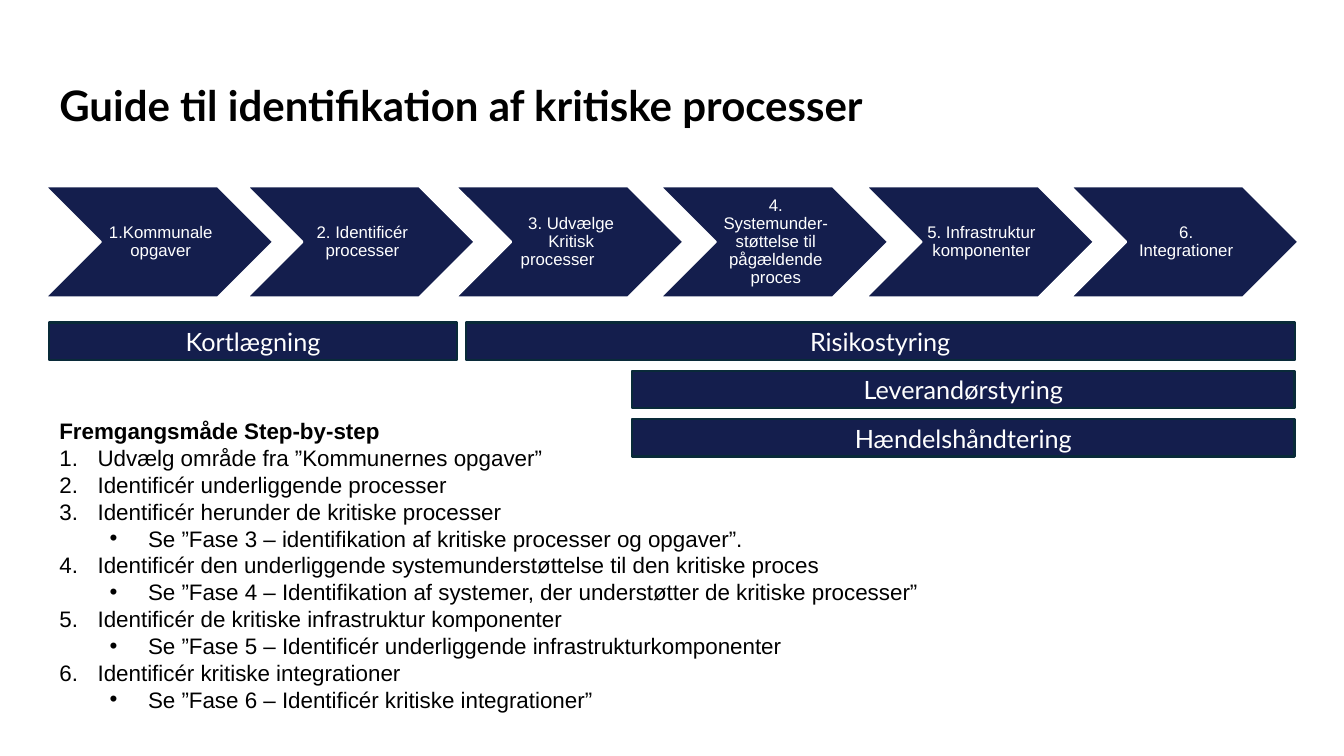
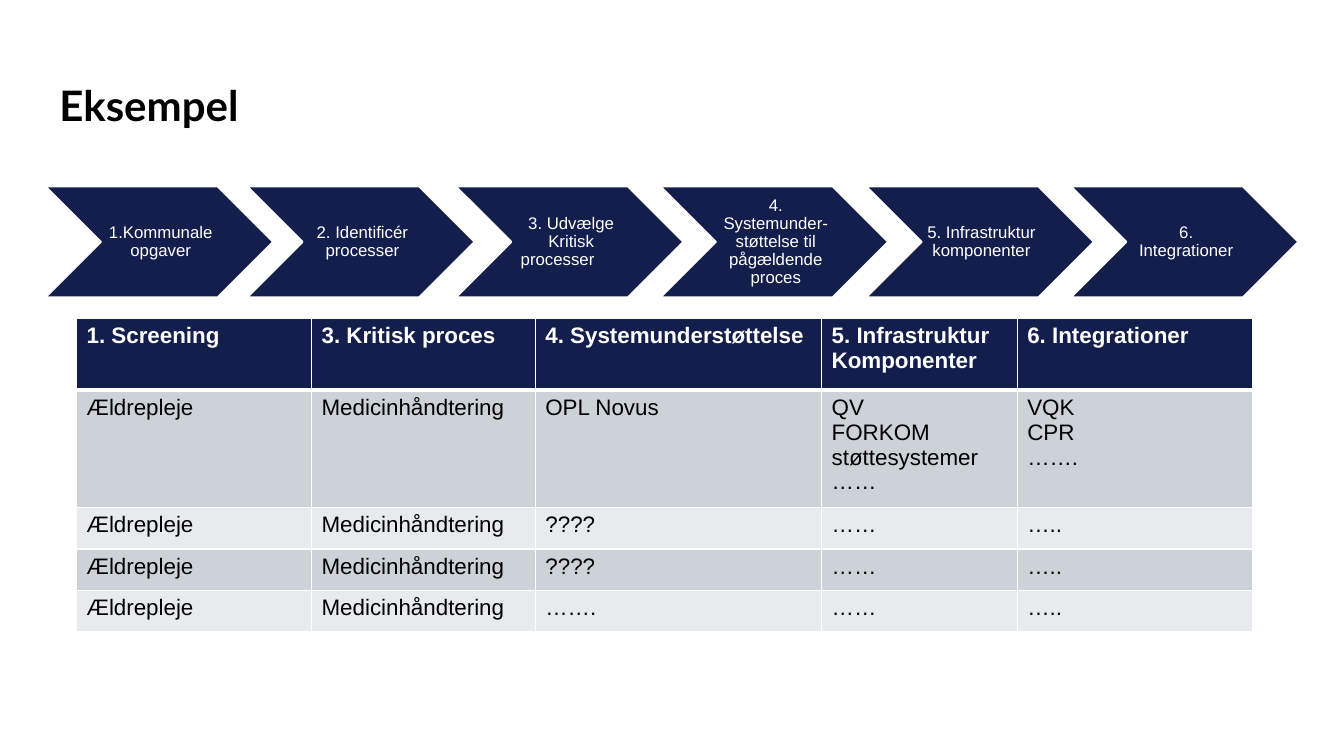
from dataclasses import dataclass

from lxml.etree import SubElement
from pptx import Presentation
from pptx.dml.color import RGBColor
from pptx.enum.shapes import MSO_SHAPE as Preset
from pptx.enum.text import MSO_ANCHOR as Anchor, PP_ALIGN as Align
from pptx.oxml import parse_xml
from pptx.oxml.ns import nsdecls, qn
from pptx.util import Emu, Pt

# Shared look
PX = 9144  # EMU in one px, 100 px to the inch
COLORS = {
    "navy": "141E4D",
    "bar_edge": "092A39",
    "white": "FFFFFF",
    "black": "000000",
    "band_dark": "CCD2D8",
    "band_light": "E8EAED",
}
TITLE_FONT, BODY_FONT = "Lato", "Arial"
INDENT = 38


@dataclass(frozen=True)
class Step:
    left: int
    label: str


@dataclass(frozen=True)
class Bar:
    left: int
    top: int
    width: int
    label: str


@dataclass(frozen=True)
class Item:
    text: str
    level: int = 0


STEPS = [
    Step(45, "1.Kommunale opgaver"),
    Step(245, "2. Identificér processer"),
    Step(452, "3. Udvælge Kritisk processer\t"),
    Step(655, "4. Systemunder-støttelse til pågældende proces"),
    Step(859, "5. Infrastruktur komponenter"),
    Step(1062, "6. Integrationer"),
]

BARS = [
    Bar(49, 320, 404, "Kortlægning"),
    Bar(462, 320, 822, "Risikostyring"),
    Bar(627, 368, 657, "Leverandørstyring"),
    Bar(627, 416, 657, "Hændelshåndtering"),
]

GUIDE_HEADING = "Fremgangsmåde Step-by-step"
GUIDE = [
    Item("Udvælg område fra ”Kommunernes opgaver”"),
    Item("Identificér underliggende processer"),
    Item("Identificér herunder de kritiske processer"),
    Item("Se ”Fase 3 – identifikation af kritiske processer og opgaver”.", 1),
    Item("Identificér den underliggende systemunderstøttelse til den kritiske proces"),
    Item("Se ”Fase 4 – Identifikation af systemer, der understøtter de kritiske processer”", 1),
    Item("Identificér de kritiske infrastruktur komponenter"),
    Item("Se ”Fase 5 – Identificér underliggende infrastrukturkomponenter", 1),
    Item("Identificér kritiske integrationer"),
    Item("Se ”Fase 6 – Identificér kritiske integrationer”", 1),
]

COLUMN_WIDTHS = [233, 222, 284, 194, 233]
ROW_HEIGHTS = [71, 116, 41, 41, 41]
EXAMPLE_ROWS = [
    ["1. Screening", "3. Kritisk proces", "4. Systemunderstøttelse",
     "5. Infrastruktur\nKomponenter", "6. Integrationer"],
    ["Ældrepleje", "Medicinhåndtering", "OPL Novus",
     "QV\nFORKOM støttesystemer\n……", "VQK\nCPR\n……."],
    ["Ældrepleje", "Medicinhåndtering", "????", "……", "….."],
    ["Ældrepleje", "Medicinhåndtering", "????", "……", "….."],
    ["Ældrepleje", "Medicinhåndtering", "…….", "……", "….."],
]


def px(length: int) -> Emu:
    return Emu(length * PX)


def color(name: str) -> RGBColor:
    return RGBColor.from_string(COLORS[name])


def format_runs(para, font: str, size: int, ink: str, bold: bool = False) -> None:
    for span in para.runs:
        span.font.name = font
        span.font.size = Pt(size)
        span.font.bold = bold
        span.font.color.rgb = color(ink)


def add_text_box(page, left: int, top: int, width: int, height: int):
    box = page.shapes.add_textbox(px(left), px(top), px(width), px(height))
    box.text_frame.word_wrap = True
    return box.text_frame


def add_label_shape(page, preset, left: int, top: int, width: int, height: int,
                    label: str, edge: str, font: str, size: int):
    """Draw a navy shape with a centred white label."""
    shape = page.shapes.add_shape(preset, px(left), px(top), px(width), px(height))
    shape.shadow.inherit = False
    shape.fill.solid()
    shape.fill.fore_color.rgb = color("navy")
    shape.line.color.rgb = color(edge)
    shape.line.width = Pt(1.5)
    frame = shape.text_frame
    frame.word_wrap = True
    frame.vertical_anchor = Anchor.MIDDLE
    frame.text = label
    frame.paragraphs[0].alignment = Align.CENTER
    format_runs(frame.paragraphs[0], font, size, "white")
    return frame


def add_step(page, step: Step) -> None:
    frame = add_label_shape(page, Preset.CHEVRON, step.left, 185, 226, 110,
                            step.label, "white", BODY_FONT, 12)
    frame.margin_left = px(5)
    frame.margin_right = frame.margin_top = frame.margin_bottom = px(2)
    frame.paragraphs[0].line_spacing = 0.9


def add_bar(page, bar: Bar) -> None:
    add_label_shape(page, Preset.RECTANGLE, bar.left, bar.top, bar.width, 37,
                    bar.label, "bar_edge", TITLE_FONT, 18)


def add_page(deck, title: str):
    """Start a page with the title and the process chain."""
    page = deck.slides.add_slide(deck.slide_layouts[6])
    frame = add_text_box(page, 49, 74, 1220, 61)
    frame.text = title
    format_runs(frame.paragraphs[0], TITLE_FONT, 30, "black", True)
    for step in STEPS:
        add_step(page, step)
    return page


def set_list_marker(para, level: int) -> None:
    para.level = level
    props = para._p.get_or_add_pPr()
    props.set("marL", str(px(INDENT + 50 * level)))
    props.set("indent", str(px(-INDENT)))
    SubElement(props, qn("a:buFont")).set("typeface", BODY_FONT)
    if level:
        SubElement(props, qn("a:buChar")).set("char", "•")
    else:
        SubElement(props, qn("a:buAutoNum")).set("type", "arabicPeriod")


def add_guide(page) -> None:
    frame = add_text_box(page, 49, 409, 924, 333)
    frame.text = GUIDE_HEADING
    format_runs(frame.paragraphs[0], BODY_FONT, 16, "black", True)
    for item in GUIDE:
        para = frame.add_paragraph()
        para.text = item.text
        set_list_marker(para, item.level)
        format_runs(para, BODY_FONT, 16, "black")


def set_borders(cell, bottom: int) -> None:
    props = cell._tc.get_or_add_tcPr()
    widths = {"lnL": 1, "lnR": 1, "lnT": 1, "lnB": bottom}
    for index, (side, width) in enumerate(widths.items()):
        props.insert(index, parse_xml(
            f'<a:{side} {nsdecls("a")} w="{Pt(width)}"><a:solidFill>'
            f'<a:srgbClr val="{COLORS["white"]}"/></a:solidFill></a:{side}>'))


def add_example_table(page) -> None:
    table = page.shapes.add_table(
        len(ROW_HEIGHTS), len(COLUMN_WIDTHS), px(76), px(316),
        px(sum(COLUMN_WIDTHS)), px(sum(ROW_HEIGHTS))).table
    for column, width in zip(table.columns, COLUMN_WIDTHS):
        column.width = px(width)
    for index, (row, height) in enumerate(zip(table.rows, ROW_HEIGHTS)):
        row.height = px(height)
        header = index == 0
        band = "navy" if header else ("band_light", "band_dark")[index % 2]
        for cell, text in zip(row.cells, EXAMPLE_ROWS[index]):
            cell.text = text
            cell.fill.solid()
            cell.fill.fore_color.rgb = color(band)
            set_borders(cell, 3 if header else 1)
            for para in cell.text_frame.paragraphs:
                format_runs(para, BODY_FONT, 16, "white" if header else "black", header)


def main() -> None:
    deck = Presentation()
    deck.slide_width, deck.slide_height = px(1333), px(750)

    # Guide
    guide_page = add_page(deck, "Guide til identifikation af kritiske processer")
    for bar in BARS:
        add_bar(guide_page, bar)
    add_guide(guide_page)

    # Example
    add_example_table(add_page(deck, "Eksempel"))

    deck.save("out.pptx")


if __name__ == "__main__":
    main()
